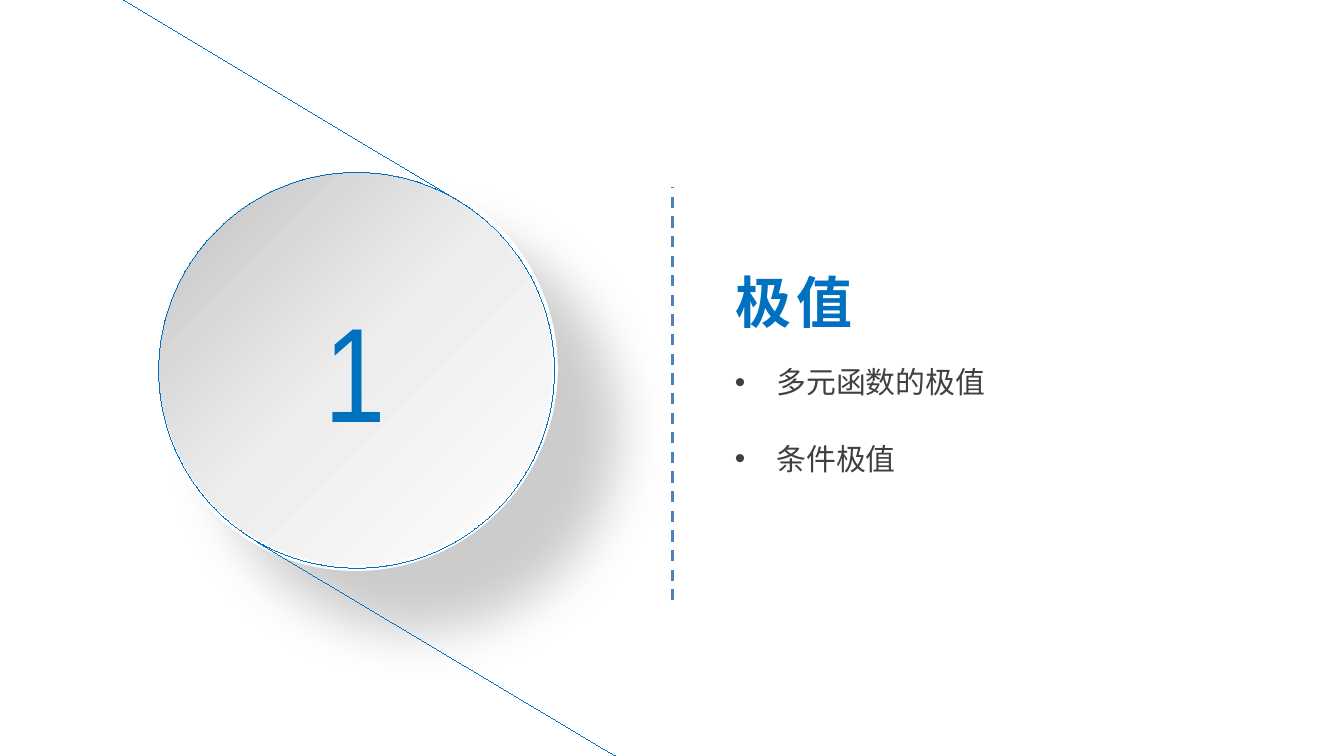
from itertools import pairwise
from math import cos, radians, sin, tan

from lxml.etree import SubElement
from pptx import Presentation
from pptx.dml.color import RGBColor
from pptx.enum.dml import MSO_LINE
from pptx.enum.shapes import MSO_CONNECTOR, MSO_SHAPE
from pptx.enum.text import MSO_ANCHOR, MSO_AUTO_SIZE, PP_ALIGN
from pptx.oxml import parse_xml
from pptx.oxml.ns import nsdecls, qn
from pptx.util import Cm, Pt

BLUE = RGBColor(0x00, 0x70, 0xC0)
DASH_BLUE = RGBColor(0x4F, 0x81, 0xBD)
DARK_GRAY = RGBColor(0x40, 0x40, 0x40)
CJK_FONT = "Noto Sans CJK SC"
CENTER_X, CENTER_Y, RADIUS = 6.74, 7.0, 3.74
FILL_STOPS = [(0, "C0C0C0"), (49, "EDEDED"), (100, "FFFFFF")]
RIM_STOPS = [(0, "FFFFFF"), (100, "C0C0C0")]


def format_run(r, font, size, color, bold=False):
    r.font.name = font
    r.font.size = Pt(size)
    r.font.bold = bold
    r.font.color.rgb = color
    SubElement(r.font._element, qn("a:ea"), typeface=font)


def format_line(shape, color, width, dash=None):
    shape.line.color.rgb = color
    if dash:
        shape.line.dash_style = dash
    shape._element.spPr.find(qn("a:ln")).set("w", str(Pt(width)))


def diagonal_gradient(stops):
    stops_xml = "".join(
        f'<a:gs pos="{pos * 1000}"><a:srgbClr val="{color}"/></a:gs>'
        for pos, color in stops)
    return parse_xml(
        f'<a:gradFill {nsdecls("a")} rotWithShape="1">'
        f'<a:gsLst>{stops_xml}</a:gsLst>'
        '<a:lin ang="2700000" scaled="0"/></a:gradFill>')


def add_line(s, x1, y1, x2, y2, color, width, dash=None):
    line = s.shapes.add_connector(
        MSO_CONNECTOR.STRAIGHT, Cm(x1), Cm(y1), Cm(x2), Cm(y2))
    format_line(line, color, width, dash)
    SubElement(line._element.spPr, qn("a:effectLst"))


def circle_point(angle, pull=0):
    a = radians(angle)
    return (Cm(CENTER_X + RADIUS * (cos(a) - pull * sin(a))),
            Cm(CENTER_Y + RADIUS * (sin(a) + pull * cos(a))))


def add_half_circle(s, start):
    angles = [start, start + 60, start + 150, start + 180]
    points = [circle_point(angle) for angle in angles]
    builder = s.shapes.build_freeform(*points[0])
    builder.add_line_segments(points[1:], close=False)
    arc = builder.convert_to_shape()
    segments = list(arc._element.spPr.iter(qn("a:lnTo")))
    for segment, (a1, a2) in zip(segments, pairwise(angles)):
        pull = 4 / 3 * tan(radians(a2 - a1) / 4)
        curve = segment.makeelement(qn("a:cubicBezTo"))
        for x, y in (circle_point(a1, pull), circle_point(a2, -pull),
                     circle_point(a2)):
            SubElement(curve, qn("a:pt"),
                       x=str(x - arc.left), y=str(y - arc.top))
        segment.getparent().replace(segment, curve)
    arc.shadow.inherit = False
    arc.fill.background()
    format_line(arc, BLUE, 0)


def add_number_disc(s, text):
    disc = s.shapes.add_shape(
        MSO_SHAPE.OVAL, Cm(2.95), Cm(3.2), Cm(7.54), Cm(7.54))
    disc.line.width = Pt(3)
    sp_pr = disc._element.spPr
    sp_pr.find(qn("a:ln")).append(diagonal_gradient(RIM_STOPS))
    sp_pr.find(qn("a:prstGeom")).addnext(diagonal_gradient(FILL_STOPS))
    sp_pr.append(parse_xml(
        f'<a:effectLst {nsdecls("a")}><a:outerShdw blurRad="{Pt(29)}" '
        f'dist="{Pt(46)}" dir="2700000" algn="tl" rotWithShape="0">'
        '<a:srgbClr val="000000"><a:alpha val="20000"/></a:srgbClr>'
        '</a:outerShdw></a:effectLst>'))
    tf = disc.text_frame
    tf.margin_left = tf.margin_right = 0
    tf.margin_top = tf.margin_bottom = Cm(0.1)
    tf.vertical_anchor = MSO_ANCHOR.MIDDLE
    tf.text = text
    p = tf.paragraphs[0]
    p.alignment = PP_ALIGN.CENTER
    format_run(p.runs[0], "Arial Narrow", 72, BLUE)


def set_title(s, text):
    title = s.shapes.title
    title.left, title.top = Cm(13.64), Cm(4.93)
    title.width, title.height = Cm(2.87), Cm(1.55)
    tf = title.text_frame
    tf.text = text
    tf.word_wrap = False
    tf.auto_size = MSO_AUTO_SIZE.SHAPE_TO_FIT_TEXT
    tf.vertical_anchor = MSO_ANCHOR.TOP
    p = tf.paragraphs[0]
    p.alignment = PP_ALIGN.LEFT
    r = p.runs[0]
    format_run(r, CJK_FONT, 30, BLUE, bold=True)
    r.font._element.set("spc", "300")


def add_bullet(s, text, top, width):
    box = s.shapes.add_textbox(Cm(13.89), Cm(top), Cm(width), Cm(0.69))
    tf = box.text_frame
    tf.word_wrap = True
    tf.auto_size = MSO_AUTO_SIZE.SHAPE_TO_FIT_TEXT
    tf.margin_left = tf.margin_right = tf.margin_top = tf.margin_bottom = 0
    tf.text = text
    p = tf.paragraphs[0]
    p_pr = p._p.get_or_add_pPr()
    p_pr.set("marL", str(Cm(0.79)))
    p_pr.set("indent", str(-Cm(0.79)))
    SubElement(p_pr, qn("a:buFont"), typeface="Arial")
    SubElement(p_pr, qn("a:buChar"), char="•")
    format_run(p.runs[0], CJK_FONT, 16, DARK_GRAY)


def main():
    prs = Presentation()
    prs.slide_width, prs.slide_height = Cm(25.4), Cm(14.29)
    s = prs.slides.add_slide(prs.slide_layouts[5])
    add_number_disc(s, "1")
    for start in (-60, 120):
        add_half_circle(s, start)
    add_line(s, 8.61, 3.76, 2.34, 0, BLUE, 0)
    add_line(s, 11.63, 14.29, 4.85, 10.24, BLUE, 0)
    set_title(s, "极值")
    add_line(s, 12.71, 11.35, 12.71, 3.54, DASH_BLUE, 1.5, MSO_LINE.DASH)
    add_bullet(s, "多元函数的极值", 6.88, 6.78)
    add_bullet(s, "条件极值", 8.33, 5.21)
    prs.save("out.pptx")


if __name__ == "__main__":
    main()
